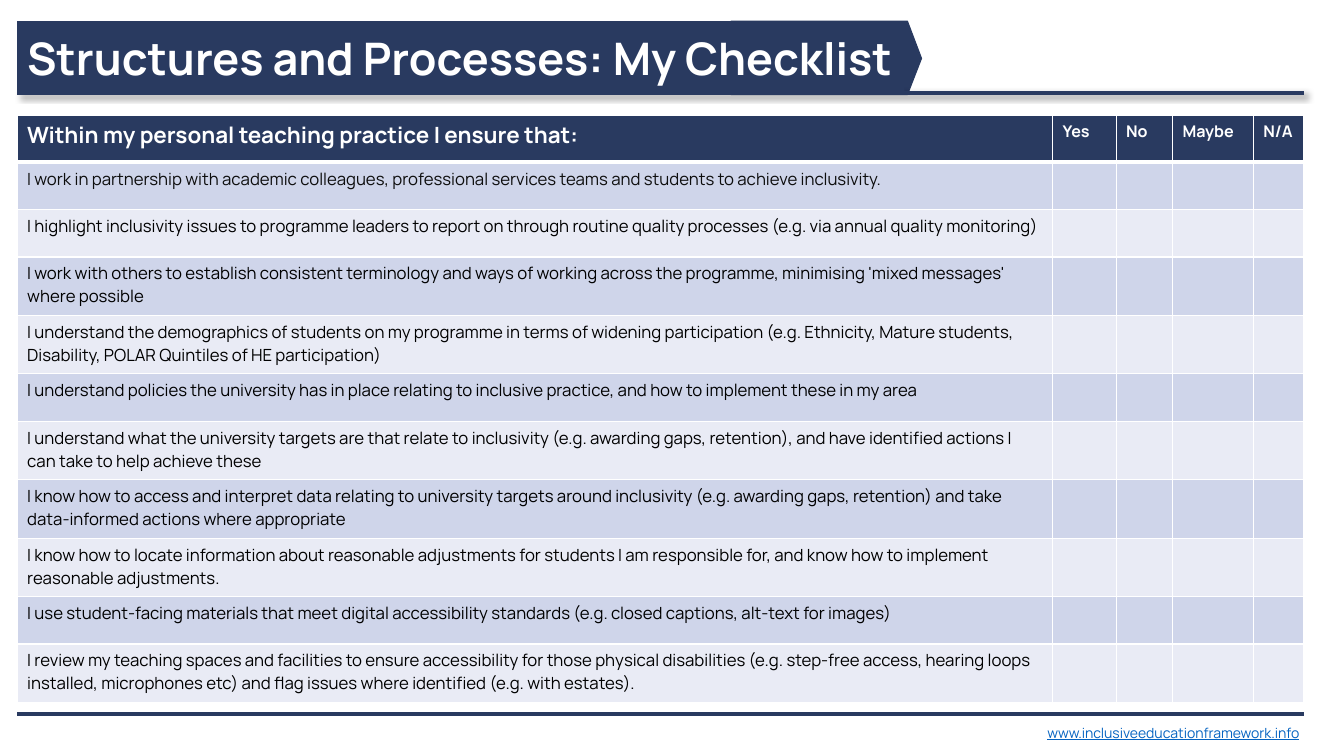
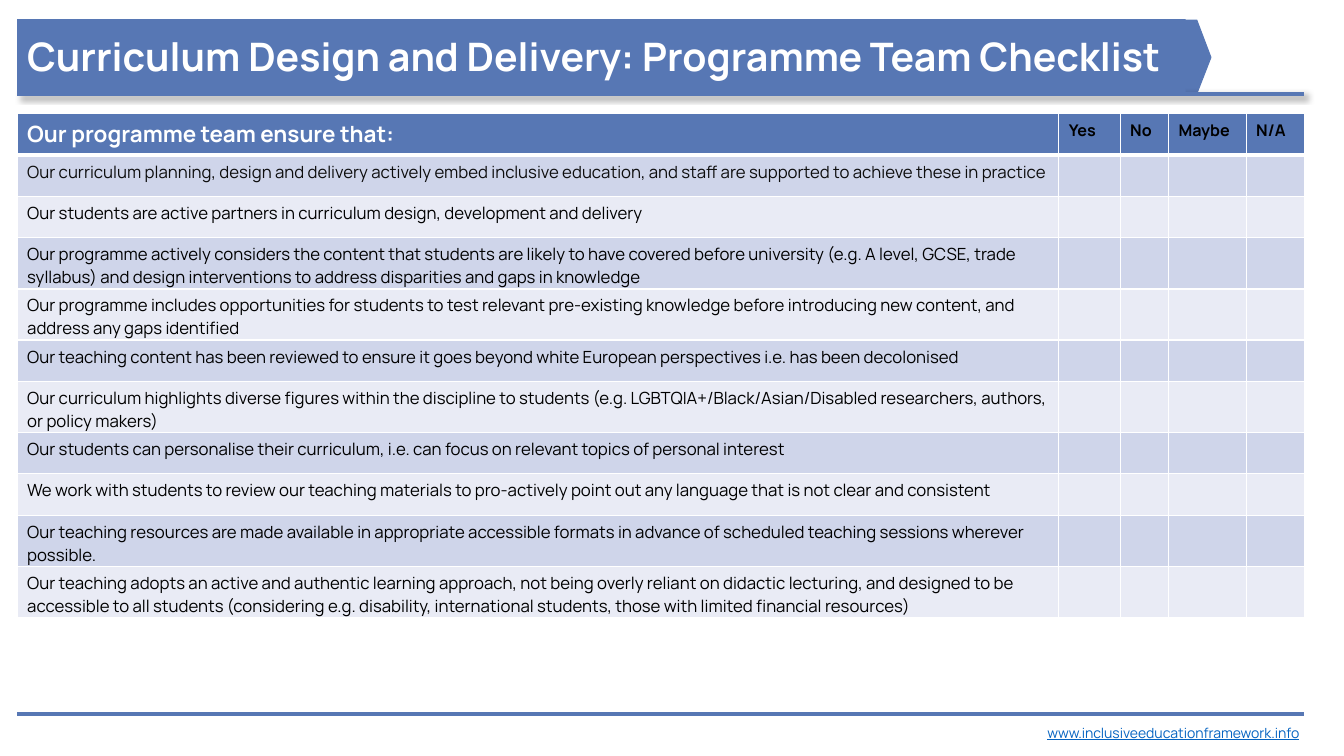
"""Build two checklist slides for inclusive teaching."""
from dataclasses import dataclass

from lxml.etree import SubElement as Sub
from pptx import Presentation
from pptx.dml.color import RGBColor as Rgb
from pptx.enum.shapes import MSO_CONNECTOR as Link
from pptx.enum.shapes import MSO_SHAPE as Shape
from pptx.enum.text import MSO_ANCHOR as Anchor
from pptx.enum.text import PP_ALIGN as Align
from pptx.oxml.ns import qn
from pptx.util import Inches, Pt

FONT = "Manrope"
SITE = "www.inclusiveeducationframework.info"
LEFT, WIDTH = 0.17, 12.76
HEADS = ("Yes", "No", "Maybe", "N/A")
HUES = {
    "navy": "293A60",
    "blue": "5777B4",
    "white": "FFFFFF",
    "black": "000000",
    "ink": "0D0D0D",
    "odd": "CFD5EA",
    "even": "E9EBF5",
    "link": "0563C1",
}


@dataclass(frozen=True)
class Band:
    """Title band with its arrow tip and rule."""
    text: str
    size: float
    top: float
    width: float
    tip: float
    tip_top: float
    rule: float


@dataclass(frozen=True)
class Grid:
    """Checklist table."""
    lead: str
    head: str
    top: float
    cols: tuple[float, ...]
    low: float
    high: float
    tall: tuple[int, ...]
    foot: float
    items: tuple[str, ...]


@dataclass(frozen=True)
class Page:
    """One checklist slide."""
    hue: str
    band: Band
    grid: Grid


PAGES = (
    Page(
        "navy",
        Band("Structures and Processes: My Checklist", 32, 0.21, 8.8, 9.14, 0.21, 0.92),
        Grid(
            "Within my personal teaching practice I ensure that:",
            "white", 1.14, (10.27, 0.63, 0.56, 0.8, 0.5),
            0.47, 0.58, (3, 4, 6, 7, 8, 10), 0.05,
            (
                "I work in partnership with academic colleagues, professional services teams and students to achieve inclusivity.",
                "I highlight inclusivity issues to programme leaders to report on through routine quality processes (e.g. via annual quality monitoring)",
                "I work with others to establish consistent terminology and ways of working across the programme, minimising 'mixed messages' where possible",
                "I understand the demographics of students on my programme in terms of widening participation (e.g. Ethnicity, Mature students, Disability, POLAR Quintiles of HE participation)",
                "I understand policies the university has in place relating to inclusive practice, and how to implement these in my area",
                "I understand what the university targets are that relate to inclusivity (e.g. awarding gaps, retention), and have identified actions I can take to help achieve these",
                "I know how to access and interpret data relating to university targets around inclusivity (e.g. awarding gaps, retention) and take data-informed actions where appropriate",
                "I know how to locate information about reasonable adjustments for students I am responsible for, and know how to implement reasonable adjustments.",
                "I use student-facing materials that meet digital accessibility standards (e.g. closed captions, alt-text for images)",
                "I review my teaching spaces and facilities to ensure accessibility for those physical disabilities (e.g. step-free access, hearing loops installed, microphones etc) and flag issues where identified (e.g. with estates).",
            ),
        ),
    ),
    Page(
        "blue",
        Band("Curriculum Design and Delivery: Programme Team Checklist", 28, 0.19, 11.59, 12.01, 0.2, 0.93),
        Grid(
            "Our programme team ensure that:",
            "black", 1.13, (10.33, 0.61, 0.48, 0.77, 0.58),
            0.41, 0.5, (3, 4, 6, 9, 10), 0,
            (
                "Our curriculum planning, design and delivery actively embed inclusive education, and staff are supported to achieve these in practice",
                "Our students are active partners in curriculum design, development and delivery",
                "Our programme actively considers the content that students are likely to have covered before university (e.g. A level, GCSE, trade syllabus) and design interventions to address disparities and gaps in knowledge",
                "Our programme includes opportunities for students to test relevant pre-existing knowledge before introducing new content, and address any gaps identified",
                "Our teaching content has been reviewed to ensure it goes beyond white European perspectives i.e. has been decolonised",
                "Our curriculum highlights diverse figures within the discipline to students (e.g. LGBTQIA+/Black/Asian/Disabled researchers, authors, or policy makers)",
                "Our students can personalise their curriculum, i.e. can focus on relevant topics of personal interest",
                "We work with students to review our teaching materials to pro-actively point out any language that is not clear and consistent",
                "Our teaching resources are made available in appropriate accessible formats in advance of scheduled teaching sessions wherever possible.",
                "Our teaching adopts an active and authentic learning approach, not being overly reliant on didactic lecturing, and designed to be accessible to all students (considering e.g. disability, international students, those with limited financial resources)",
            ),
        ),
    ),
)


def tint(name: str) -> Rgb:
    """Look up a colour."""
    return Rgb.from_string(HUES[name])


def write(frame, text: str, size: float, hue: str, bold: bool = False, under: bool = False) -> None:
    """Put one styled run in a text frame."""
    para = frame.paragraphs[0]
    para.alignment = Align.LEFT
    run = para.add_run()
    run.text = text
    font = run.font
    font.name, font.size, font.bold = FONT, Pt(size), bold
    font.color.rgb = tint(hue)
    if under:
        font.underline = True


def paint(shape, hue: str) -> None:
    """Fill and outline a shape in one colour."""
    shape.shadow.inherit = False
    shape.fill.solid()
    shape.fill.fore_color.rgb = tint(hue)
    shape.line.color.rgb = tint(hue)
    shape.line.width = Pt(0.75)


def rule(slide, top: float, hue: str, shade: bool = False) -> None:
    """Draw a full-width line, with a shadow if asked."""
    y = Inches(top)
    line = slide.shapes.add_connector(Link.STRAIGHT, Inches(LEFT), y, Inches(LEFT + WIDTH), y)
    line.line.color.rgb = tint(hue)
    line.line.width = Pt(3)
    fx = Sub(line._element.spPr, qn("a:effectLst"))
    if shade:
        cast = Sub(fx, qn("a:outerShdw"), blurRad=str(Pt(4)), dist=str(Pt(3)),
                   dir="2700000", algn="tl", rotWithShape="0")
        ink = Sub(cast, qn("a:srgbClr"), val=HUES["black"])
        Sub(ink, qn("a:alpha"), val="40000")


def arrow(slide, band: Band, hue: str) -> None:
    """Draw the pointed end of the title band."""
    right, top = band.tip, band.tip_top
    back, neck, base = right - 1.89, right - 0.14, top + 0.73
    spots = ((back, top), (back, base), (neck, base), (right, top + 0.37))
    form = slide.shapes.build_freeform(Inches(neck), Inches(top))
    form.add_line_segments([(Inches(x), Inches(y)) for x, y in spots], close=True)
    paint(form.convert_to_shape(), hue)


def title(slide, band: Band, hue: str) -> None:
    """Draw the title band."""
    box = slide.shapes.add_shape(Shape.RECTANGLE, Inches(LEFT), Inches(band.top),
                                 Inches(band.width), Inches(0.73))
    paint(box, hue)
    box.line.fill.background()
    frame = box.text_frame
    frame.word_wrap = True
    frame.vertical_anchor = Anchor.MIDDLE
    write(frame, band.text, band.size, "white", bold=True)


def edge(cell, row: int) -> None:
    """Give a cell white borders, thick under the header."""
    props = cell._tc.get_or_add_tcPr()
    wide = {"T": row == 1, "B": row == 0}
    for side in "LRTB":
        line = Sub(props, qn(f"a:ln{side}"), w=str(Pt(3 if wide.get(side) else 1)))
        fill = Sub(line, qn("a:solidFill"))
        Sub(fill, qn("a:srgbClr"), val=HUES["white"])


def table(slide, grid: Grid, hue: str) -> None:
    """Draw the checklist table."""
    sizes = [grid.high if i in grid.tall else grid.low for i in range(len(grid.items) + 1)]
    tab = slide.shapes.add_table(len(sizes), len(grid.cols), Inches(LEFT), Inches(grid.top),
                                 Inches(WIDTH), Inches(sum(sizes))).table
    tab.horz_banding = False
    for col, width in zip(tab.columns, grid.cols):
        col.width = Inches(width)
    for i, size in enumerate(sizes):
        tab.rows[i].height = Inches(size)
        for j in range(len(grid.cols)):
            cell = tab.cell(i, j)
            cell.margin_bottom = Inches(grid.foot)
            edge(cell, i)
            cell.fill.solid()
            cell.fill.fore_color.rgb = tint(hue if i == 0 else "odd" if i % 2 else "even")
    write(tab.cell(0, 0).text_frame, grid.lead, 16, "white", bold=True)
    for j, head in enumerate(HEADS, 1):
        write(tab.cell(0, j).text_frame, head, 11.5, grid.head, bold=True)
    for i, item in enumerate(grid.items, 1):
        write(tab.cell(i, 0).text_frame, item, 12, "ink" if i == 1 else "black")


def footer(slide, hue: str) -> None:
    """Draw the web address and the bottom rule."""
    box = slide.shapes.add_textbox(Inches(10.29), Inches(7.14), Inches(2.8), Inches(0.27))
    box.text_frame.word_wrap = True
    write(box.text_frame, SITE, 10, "link", under=True)
    rule(slide, 7.08, hue)


def main() -> None:
    """Build and save the deck."""
    deck = Presentation()
    deck.slide_width, deck.slide_height = Inches(13.33), Inches(7.5)
    for page in PAGES:
        slide = deck.slides.add_slide(deck.slide_layouts[6])
        table(slide, page.grid, page.hue)
        footer(slide, page.hue)
        arrow(slide, page.band, page.hue)
        rule(slide, page.band.rule, page.hue, shade=True)
        title(slide, page.band, page.hue)
    deck.save("out.pptx")


if __name__ == "__main__":
    main()
